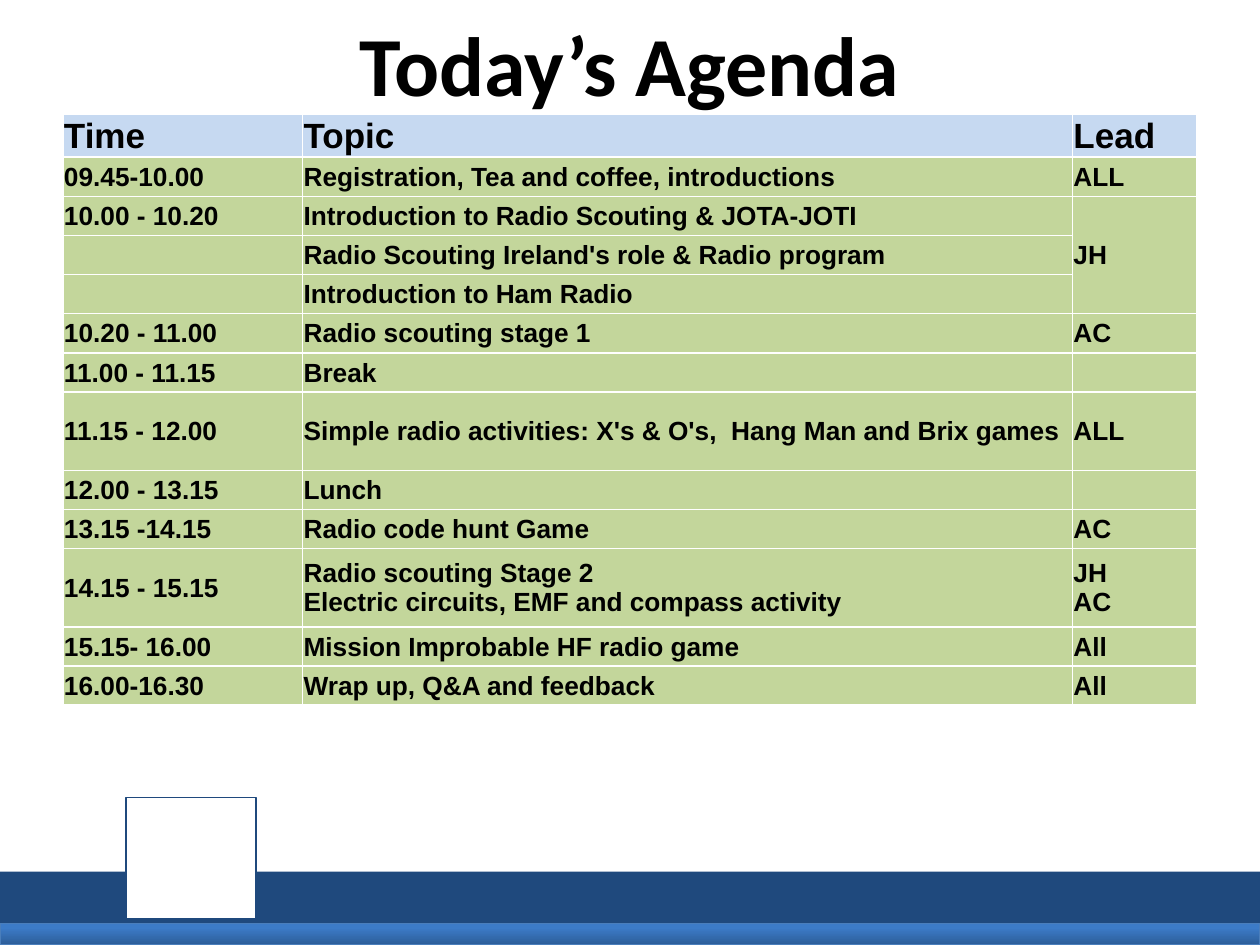
from dataclasses import dataclass

from pptx import Presentation
from pptx import util as u
from pptx.dml.color import RGBColor
from pptx.enum import shapes, text
from pptx.oxml import xmlchemy as xml


@dataclass(frozen=True)
class Theme:
    """Colours, fonts and type sizes of the slide."""
    ink: str = "000000"
    paper: str = "FFFFFF"
    navy: str = "1F497D"
    sky: str = "C6D9F1"
    leaf: str = "C3D69B"
    glow: str = "3C7BC7"
    deep: str = "2C5D98"
    edge: str = "4A7EBB"
    head: str = "Calibri"
    body: str = "Arial"
    title: int = 48
    label: int = 20
    cell: int = 15


THEME = Theme()
HEADS = ("Time", "Topic", "Lead")
AGENDA = [
    ("09.45-10.00", "Registration, Tea and coffee, introductions", "ALL"),
    ("10.00 - 10.20", "Introduction to Radio Scouting & JOTA-JOTI", "JH"),
    ("", "Radio Scouting Ireland's role & Radio program", ""),
    ("", "Introduction to Ham Radio", ""),
    ("10.20 - 11.00", "Radio scouting stage 1", "AC"),
    ("11.00 - 11.15", "Break", ""),
    ("11.15 - 12.00", "Simple radio activities: X's & O's,  Hang Man and Brix games", "ALL"),
    ("12.00 - 13.15", "Lunch", ""),
    ("13.15 -14.15", "Radio code hunt Game", "AC"),
    ("14.15 - 15.15", "Radio scouting Stage 2\nElectric circuits, EMF and compass activity", "JH\nAC"),
    ("15.15- 16.00", "Mission Improbable HF radio game", "All"),
    ("16.00-16.30", "Wrap up, Q&A and feedback", "All"),
]
TALL = (7, 10)
JOINED = (2, 4)


def rgb(code):
    """Turn a hex code into a colour."""
    return RGBColor.from_string(code)


def write(frame, words, size=THEME.cell, face=THEME.body, tint=THEME.ink, align=text.PP_ALIGN.LEFT):
    """Put bold words into the first paragraph of a text frame."""
    para = frame.paragraphs[0]
    para.text = words
    para.alignment = align
    for run in para.runs:
        run.font.size = u.Pt(size)
        run.font.name = face
        run.font.bold = True
        run.font.color.rgb = rgb(tint)
    if not words:
        end = xml.OxmlElement("a:endParaRPr")
        end.set("sz", str(size * 100))
        para._p.append(end)


def block(slide, box, fill=None, line=None):
    """Draw a plain rectangle in a box given in centimetres."""
    shape = slide.shapes.add_shape(shapes.MSO_SHAPE.RECTANGLE, *map(u.Cm, box))
    shape.shadow.inherit = False
    if fill:
        shape.fill.solid()
        shape.fill.fore_color.rgb = rgb(fill)
    if line:
        shape.line.color.rgb = rgb(line)
        shape.line.width = u.Pt(0.75)
    else:
        shape.line.fill.background()
    return shape


def footer(slide, box):
    """Place the navy band, the shaded strip and the white badge."""
    left, top, width, height = box
    strip = 0.43
    block(slide, (left, top, width, height - strip), THEME.navy)
    bar = block(slide, (left, top + height - strip, width, strip), line=THEME.edge)
    bar.fill.gradient()
    bar.fill.gradient_angle = 270
    for stop, place, tint in zip(bar.fill.gradient_stops, (0.2, 1), (THEME.glow, THEME.deep)):
        stop.position = place
        stop.color.rgb = rgb(tint)
    block(slide, (left + 2.54, top - 1.49, 2.62, 2.44), THEME.paper, THEME.navy)


def title(slide, box):
    """Place the centred heading."""
    frame = slide.shapes.add_textbox(*map(u.Cm, box)).text_frame
    frame.word_wrap = True
    frame.vertical_anchor = text.MSO_ANCHOR.MIDDLE
    write(frame, "Today’s Agenda", size=THEME.title, face=THEME.head, align=text.PP_ALIGN.CENTER)


def agenda(slide, box):
    """Place the timetable, with double height for the tall rows."""
    rows = [HEADS, *AGENDA]
    left, top, width, height = box
    first = 0.83
    unit = (height - first) / (len(AGENDA) + len(TALL))
    table = slide.shapes.add_table(len(rows), len(HEADS), *map(u.Cm, box)).table
    table.horz_banding = False
    for col, part in zip(table.columns, (4.83, 15.52, width - 20.35)):
        col.width = u.Cm(part)
    for i, (row, words) in enumerate(zip(table.rows, rows)):
        row.height = u.Cm(unit * (2 if i in TALL else 1) if i else first)
        for cell, word in zip(row.cells, words):
            cell.fill.solid()
            cell.fill.fore_color.rgb = rgb(THEME.leaf if i else THEME.sky)
            cell.margin_left = cell.margin_right = cell.margin_top = u.Cm(0.02)
            cell.margin_bottom = 0
            cell.vertical_anchor = text.MSO_ANCHOR.MIDDLE
            write(cell.text_frame, word, size=THEME.cell if i else THEME.label)
    start, stop = JOINED
    table.cell(start, 2).merge(table.cell(stop, 2))


def main():
    """Build and save the slide."""
    deck = Presentation()
    deck.slide_width, deck.slide_height = u.Cm(25.4), u.Cm(19.05)
    slide = deck.slides.add_slide(deck.slide_layouts[6])
    footer(slide, (0, 17.57, 25.4, 1.48))
    title(slide, (1.27, 0, 22.86, 2.54))
    agenda(slide, (1.27, 2.3, 22.86, 11.88))
    deck.save("out.pptx")


if __name__ == "__main__":
    main()
